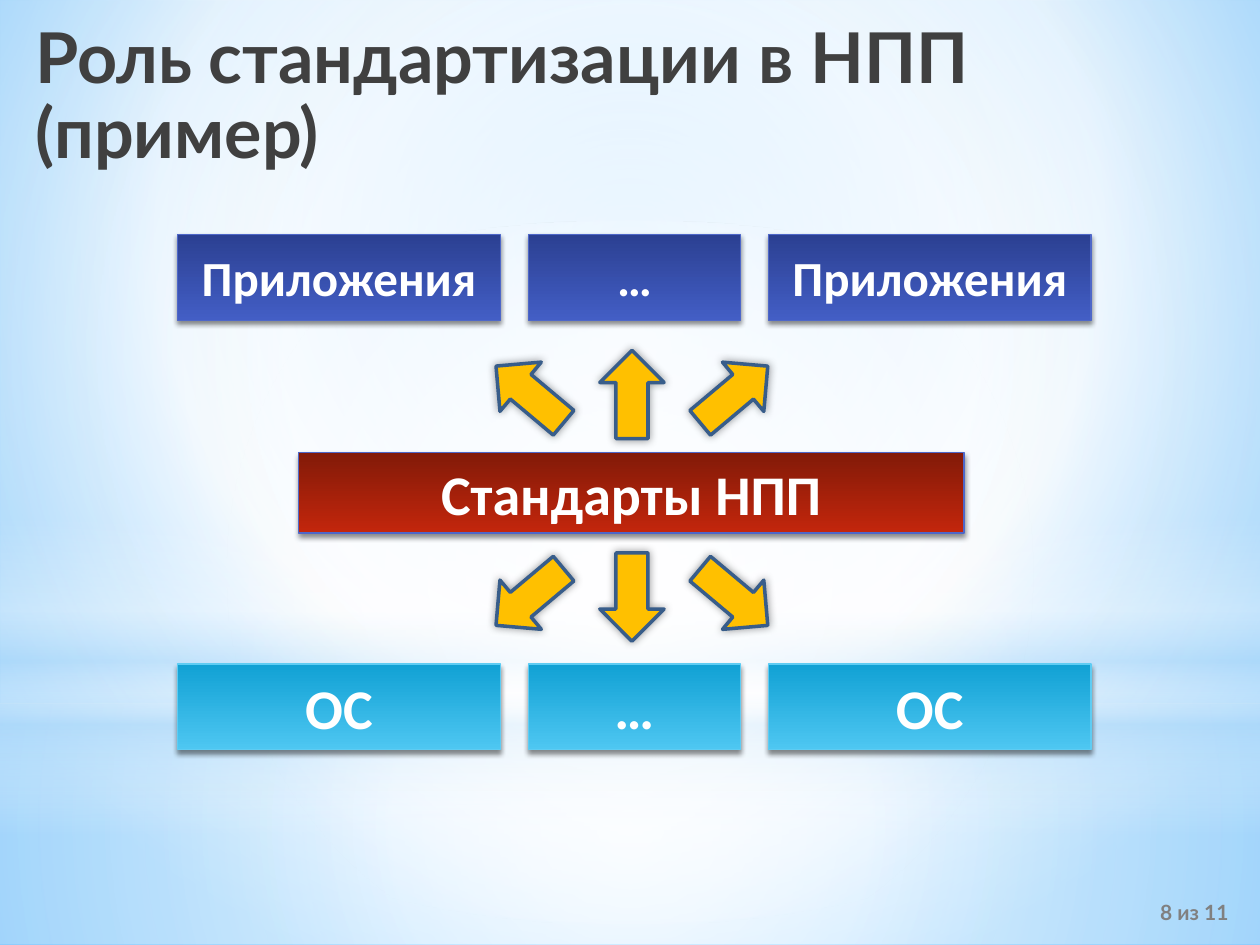
from lxml import etree
from pptx import Presentation
from pptx.dml.color import RGBColor
from pptx.enum import shapes as sh, text as tx
from pptx.oxml import parse_xml
from pptx.oxml.ns import nsdecls, qn
from pptx.util import Pt

WHITE = "FFFFFF"
SKY = "B4DCFA"
CENTER = (50, 50, 50, 50)


def color(code):
    return RGBColor.from_string(code)


def blend(holder, stops, angle=90, focus=None):
    parts = "".join(
        f'<a:gs pos="{pos * 1000}"><a:srgbClr val="{code}">'
        f'<a:alpha val="{alpha * 1000}"/></a:srgbClr></a:gs>'
        for pos, code, alpha in stops)
    if focus:
        edges = " ".join(f'{side}="{val * 1000}"' for side, val in zip("ltrb", focus))
        way = f'<a:path path="circle"><a:fillToRect {edges}/></a:path>'
    else:
        way = f'<a:lin ang="{angle * 60000}" scaled="0"/>'
    fill = parse_xml(f'<a:gradFill {nsdecls("a")} rotWithShape="1">'
                     f'<a:gsLst>{parts}</a:gsLst>{way}</a:gradFill>')
    old = holder.find(qn("a:solidFill"))
    holder.replace(old, fill)


def shade(shape, alpha, blur, dist=0, angle=0):
    shape.shadow.inherit = False
    effects = shape._element.spPr.find(qn("a:effectLst"))
    drop = etree.SubElement(effects, qn("a:outerShdw"), blurRad=str(Pt(blur)),
                            dist=str(Pt(dist)), dir=str(angle * 60000),
                            algn="ctr", rotWithShape="0")
    tint = etree.SubElement(drop, qn("a:srgbClr"), val="000000")
    etree.SubElement(tint, qn("a:alpha"), val=str(alpha * 1000))


def add(slide, kind, box):
    return slide.shapes.add_shape(kind, *(Pt(n) for n in box))


def style(par, size, code, face):
    for run in par.runs:
        run.font.size = Pt(size)
        run.font.bold = True
        run.font.name = face
        run.font.color.rgb = color(code)


def backdrop(slide, master):
    master.background.fill.solid()
    blend(master._element.find(".//" + qn("p:bgPr")),
          [(0, "9ED5FF", 100), (60, WHITE, 100), (100, "5BB9FF", 100)],
          focus=(20, 10, 20, 60))
    rect, oval = sh.MSO_SHAPE.RECTANGLE, sh.MSO_SHAPE.OVAL
    layers = [
        (rect, (0, 402, 720, 138),
         [(0, WHITE, 91), (37, WHITE, 76), (100, SKY, 79)], CENTER),
        (rect, (0, 0, 720, 402),
         [(0, WHITE, 89), (48, WHITE, 62), (100, SKY, 79)], CENTER),
        (rect, (0, 296.6, 720, 180),
         [(0, WHITE, 0), (29, WHITE, 30), (45, SKY, 40),
          (55, WHITE, 26), (65, SKY, 60), (100, WHITE, 0)], None),
        (oval, (0, 126, 720, 402), [(0, WHITE, 100), (56, WHITE, 0), (100, WHITE, 0)], CENTER),
    ]
    for num, (kind, box, stops, focus) in enumerate(layers):
        layer = add(slide, kind, box)
        layer.shadow.inherit = False
        layer.line.fill.background()
        layer.fill.solid()
        blend(layer._element.spPr, stops, focus=focus)
        layer._element.nvSpPr.cNvPr.set("id", str(20 + num))
        master.shapes._spTree.insert(2 + num, layer._element)


def heading(slide, box):
    title = slide.shapes.title
    title.left, title.top, title.width, title.height = (Pt(n) for n in box)
    frame = title.text_frame
    frame.text = "Роль стандартизации в НПП\v(пример)"
    frame.auto_size = tx.MSO_AUTO_SIZE.NONE
    frame.vertical_anchor = tx.MSO_ANCHOR.TOP
    par = frame.paragraphs[0]
    par.alignment = tx.PP_ALIGN.LEFT
    par.line_spacing = 0.9
    style(par, 40, "404040", "Lato")


def block(slide, box, label, size, dark, light, edge):
    rect = add(slide, sh.MSO_SHAPE.RECTANGLE, box)
    rect.fill.solid()
    blend(rect._element.spPr, [(0, dark, 100), (100, light, 100)])
    rect.line.color.rgb = color(edge)
    rect.line.width = Pt(0.75)
    shade(rect, 45, 3.1, 1.8, 90)
    frame = rect.text_frame
    frame.text = label
    frame.word_wrap = True
    frame.vertical_anchor = tx.MSO_ANCHOR.MIDDLE
    frame.margin_left = frame.margin_right = Pt(8)
    frame.margin_top = frame.margin_bottom = Pt(4)
    par = frame.paragraphs[0]
    par.alignment = tx.PP_ALIGN.CENTER
    style(par, size, WHITE, "Calibri")


def tier(slide, box, label, *look):
    left, top, width, height = box
    wide, slim = 184.4, 121
    gap = (width - 2 * wide - slim) / 2
    for name, span in ((label, wide), ("…", slim), (label, wide)):
        block(slide, (left, top, span, height), name, *look)
        left += span + gap


def arrows(slide, box, turns):
    left, top, width, height = box
    span = 36.7
    step = (width - span) / (len(turns) - 1)
    for num, turn in enumerate(turns):
        arrow = add(slide, sh.MSO_SHAPE.DOWN_ARROW, (left + num * step, top, span, height))
        arrow.rotation = turn
        arrow.fill.solid()
        arrow.fill.fore_color.rgb = color("FFC000")
        arrow.line.color.rgb = color("385D8A")
        arrow.line.width = Pt(2)
        shade(arrow, 40, 5)


def footer(slide, box):
    frame = slide.shapes.add_textbox(*(Pt(n) for n in box)).text_frame
    frame.text = "8 из 11"
    frame.word_wrap = True
    frame.vertical_anchor = tx.MSO_ANCHOR.MIDDLE
    par = frame.paragraphs[0]
    par.alignment = tx.PP_ALIGN.RIGHT
    style(par, 12, "808080", "Lato")


def main():
    deck = Presentation()
    deck.slide_width, deck.slide_height = Pt(720), Pt(540)
    slide = deck.slides.add_slide(deck.slide_layouts[5])
    backdrop(slide, deck.slide_master)
    heading(slide, (13, 9.4, 693.4, 90))
    arrows(slide, (284.4, 200.2, 153.4, 50.4), (130, 180, 230))
    block(slide, (170.7, 258.5, 380.2, 46.1), "Стандарты НПП", 32,
          "821A08", "C3260C", "4E67C8")
    tier(slide, (101.5, 134, 522, 49), "Приложения", 28, "2B4092", "435EC5", "4E67C8")
    tier(slide, (101.5, 379.5, 522, 49), "ОС", 32, "11A1D4", "4EC7F2", "5ECCF3")
    footer(slide, (565.2, 506.9, 144, 28.8))
    arrows(slide, (284.4, 316, 153.4, 50.4), (50, 0, 310))
    deck.save("out.pptx")


if __name__ == "__main__":
    main()
